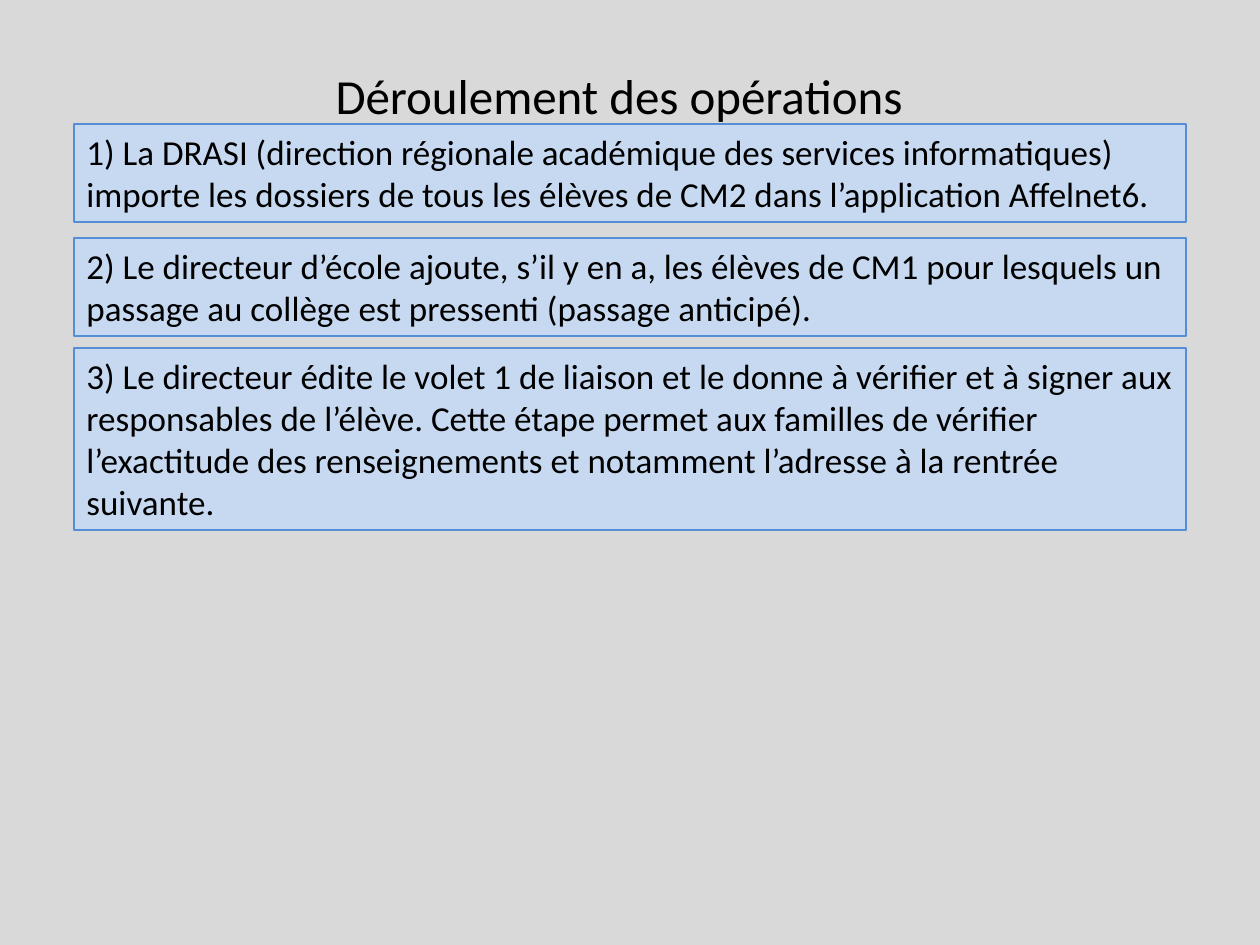
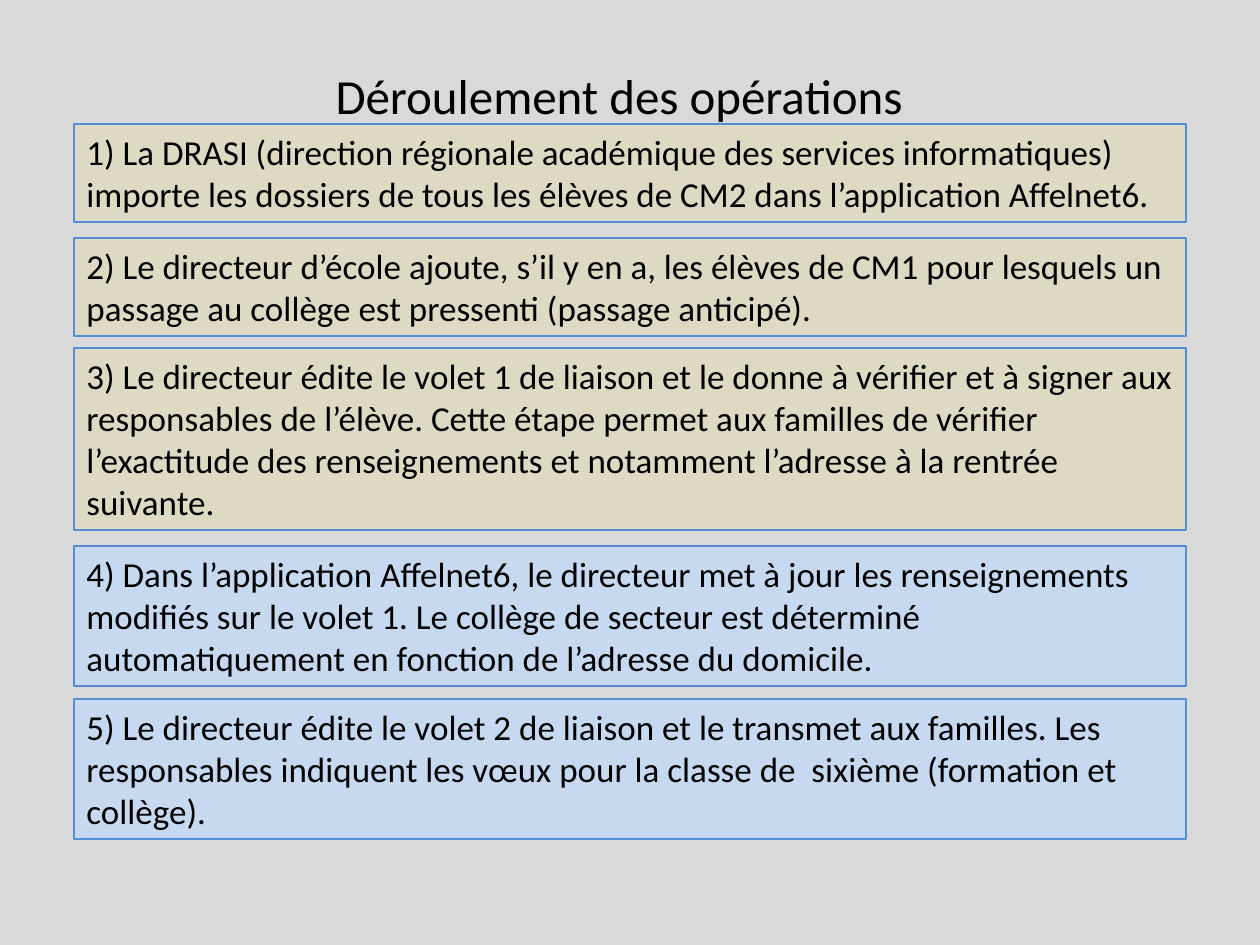
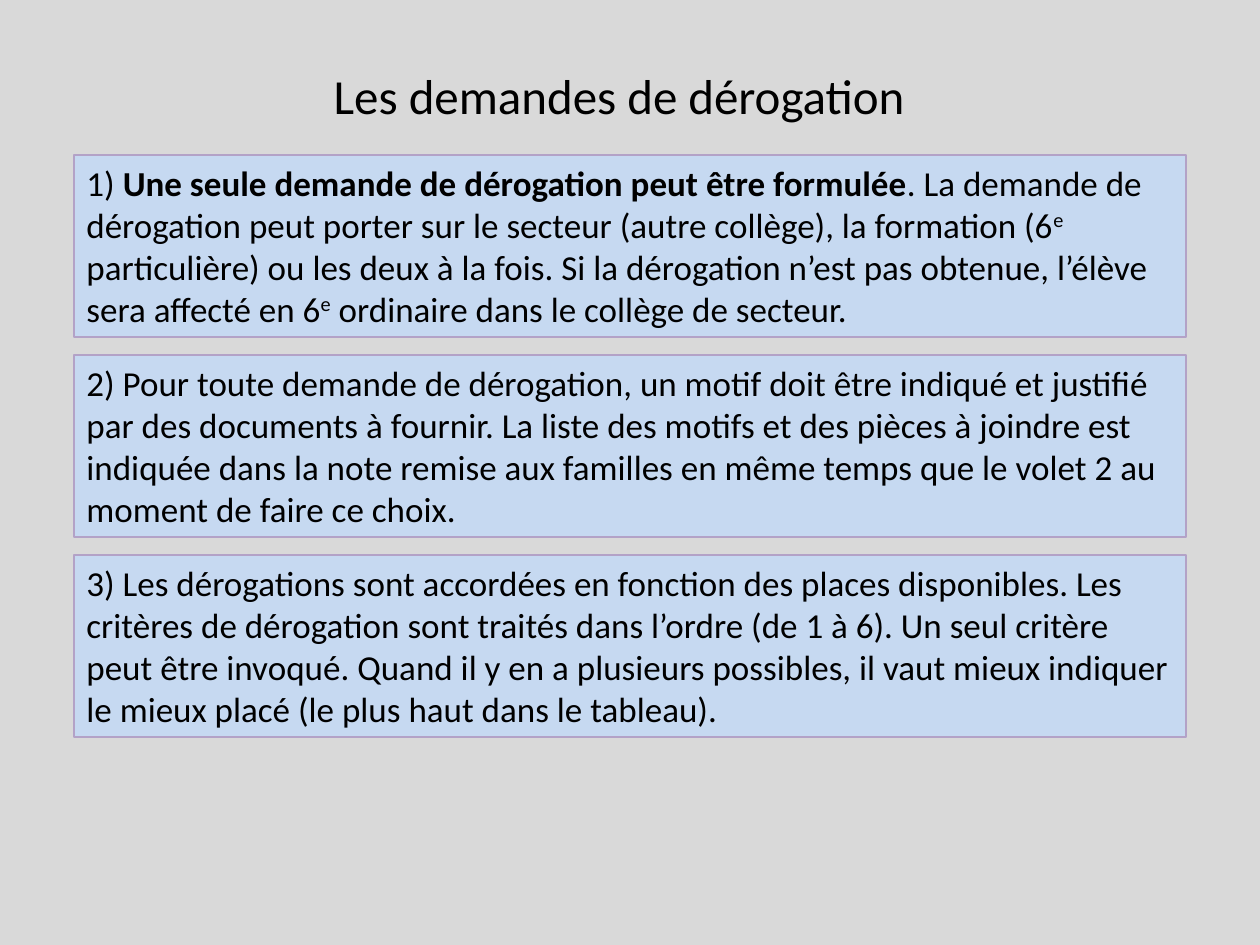
from pptx import Presentation
from pptx.dml.color import RGBColor
from pptx.enum.shapes import MSO_SHAPE
from pptx.enum.text import MSO_ANCHOR, MSO_AUTO_SIZE, PP_ALIGN
from pptx.util import Emu, Pt

SCALE = 914400 / 126
COLORS = {
    "background": "D9D9D9",
    "text": "000000",
    "current": "C6D9F1",
    "done": "DDD9C3",
    "blue_line": "558ED5",
    "violet_line": "B3A2C7",
}
FONTS = {
    "title": {"name": "Calibri", "size": Pt(28)},
    "step": {"name": "Calibri", "size": Pt(20)},
}
FRAMES = {
    "title": {"word_wrap": True, "vertical_anchor": MSO_ANCHOR.MIDDLE},
    "step": {
        "word_wrap": True,
        "vertical_anchor": MSO_ANCHOR.TOP,
        "auto_size": MSO_AUTO_SIZE.SHAPE_TO_FIT_TEXT,
    },
}
ALIGNMENTS = {"title": PP_ALIGN.CENTER, "step": PP_ALIGN.LEFT}
STEP_LEFT, STEP_WIDTH = 74, 1112
LINE_HEIGHT, STEP_PADDING = 42, 14

OPERATIONS_TITLE = "Déroulement des opérations"
OPERATIONS = [
    (124, 2, "1) La DRASI (direction régionale académique des services informatiques) "
     "importe les dossiers de tous les élèves de CM2 dans l’application Affelnet6."),
    (238, 2, "2) Le directeur d’école ajoute, s’il y en a, les élèves de CM1 pour lesquels "
     "un passage au collège est pressenti (passage anticipé)."),
    (348, 4, "3) Le directeur édite le volet 1 de liaison et le donne à vérifier et à signer "
     "aux responsables de l’élève. Cette étape permet aux familles de vérifier l’exactitude "
     "des renseignements et notamment l’adresse à la rentrée suivante."),
    (546, 3, "4) Dans l’application Affelnet6, le directeur met à jour les renseignements "
     "modifiés sur le volet 1. Le collège de secteur est déterminé automatiquement en "
     "fonction de l’adresse du domicile."),
    (699, 3, "5) Le directeur édite le volet 2 de liaison et le transmet aux familles. Les "
     "responsables indiquent les vœux pour la classe de  sixième (formation et collège)."),
]
FIRST_OPERATIONS = 3

EXEMPTIONS_TITLE = "Les demandes de dérogation"
EXEMPTIONS_TOP, EXEMPTIONS_PITCH, EXEMPTIONS_LINES = 155, 200, 4
EXEMPTIONS = [
    [
        ("1) ", "plain"),
        ("Une seule demande de dérogation peut être formulée", "bold"),
        (". La demande de dérogation peut porter sur le secteur (autre collège), "
         "la formation (6", "plain"),
        ("e", "superscript"),
        (" particulière) ou les deux à la fois. Si la dérogation n’est pas obtenue, "
         "l’élève sera affecté en 6", "plain"),
        ("e", "superscript"),
        (" ordinaire dans le collège de secteur.", "plain"),
    ],
    "2) Pour toute demande de dérogation, un motif doit être indiqué et justifié par des "
    "documents à fournir. La liste des motifs et des pièces à joindre est indiquée dans la "
    "note remise aux familles en même temps que le volet 2 au moment de faire ce choix.",
    "3) Les dérogations sont accordées en fonction des places disponibles. Les critères de "
    "dérogation sont traités dans l’ordre (de 1 à 6). Un seul critère peut être invoqué. "
    "Quand il y en a plusieurs possibles, il vaut mieux indiquer le mieux placé (le plus "
    "haut dans le tableau).",
]


def px(*lengths):
    """Turn pixel lengths into EMU."""
    return [Emu(round(length * SCALE)) for length in lengths]


def color(name):
    """Look up a named colour."""
    return RGBColor.from_string(COLORS[name])


def set_values(target, values):
    """Set attributes from a dict of format values."""
    for name, value in values.items():
        setattr(target, name, value)


class SlideBuilder:
    """Holds the shared style and the current slide."""

    def __init__(self):
        """Open an empty deck of the right size."""
        self.deck = Presentation()
        self.deck.slide_width, self.deck.slide_height = px(1260, 945)
        self.page = None

    def start(self, title):
        """Add a slide with its background and title."""
        self.page = self.deck.slides.add_slide(self.deck.slide_layouts[6])
        fill = self.page.background.fill
        fill.solid()
        fill.fore_color.rgb = color("background")
        box = self.page.shapes.add_textbox(*px(233, 55, 772, 79))
        self.add_text(box, title, "title")

    def add_text(self, box, content, style):
        """Fill a box with one paragraph of plain or mixed text."""
        set_values(box.text_frame, FRAMES[style])
        para = box.text_frame.paragraphs[0]
        para.alignment = ALIGNMENTS[style]
        parts = [(content, "plain")] if isinstance(content, str) else content
        for text, kind in parts:
            span = para.add_run()
            span.text = text
            set_values(span.font, FONTS[style])
            span.font.color.rgb = color("text")
            if kind == "bold":
                span.font.bold = True
            elif kind == "superscript":
                span._r.get_or_add_rPr().set("baseline", "30000")

    def step(self, top, lines, content, fill="current", line="blue_line"):
        """Add a framed step as high as its lines of text."""
        height = lines * LINE_HEIGHT + STEP_PADDING
        box = self.page.shapes.add_shape(
            MSO_SHAPE.RECTANGLE, *px(STEP_LEFT, top, STEP_WIDTH, height))
        box.shadow.inherit = False
        box.fill.solid()
        box.fill.fore_color.rgb = color(fill)
        box.line.color.rgb = color(line)
        box.line.width = Pt(0.75)
        self.add_text(box, content, "step")


def main():
    """Build and save the three slides."""
    builder = SlideBuilder()

    builder.start(OPERATIONS_TITLE)
    for operation in OPERATIONS[:FIRST_OPERATIONS]:
        builder.step(*operation)

    builder.start(OPERATIONS_TITLE)
    for index, operation in enumerate(OPERATIONS):
        builder.step(*operation, fill="done" if index < FIRST_OPERATIONS else "current")

    builder.start(EXEMPTIONS_TITLE)
    for index, content in enumerate(EXEMPTIONS):
        top = EXEMPTIONS_TOP + index * EXEMPTIONS_PITCH
        builder.step(top, EXEMPTIONS_LINES, content, line="violet_line")

    builder.deck.save("out.pptx")


if __name__ == "__main__":
    main()
